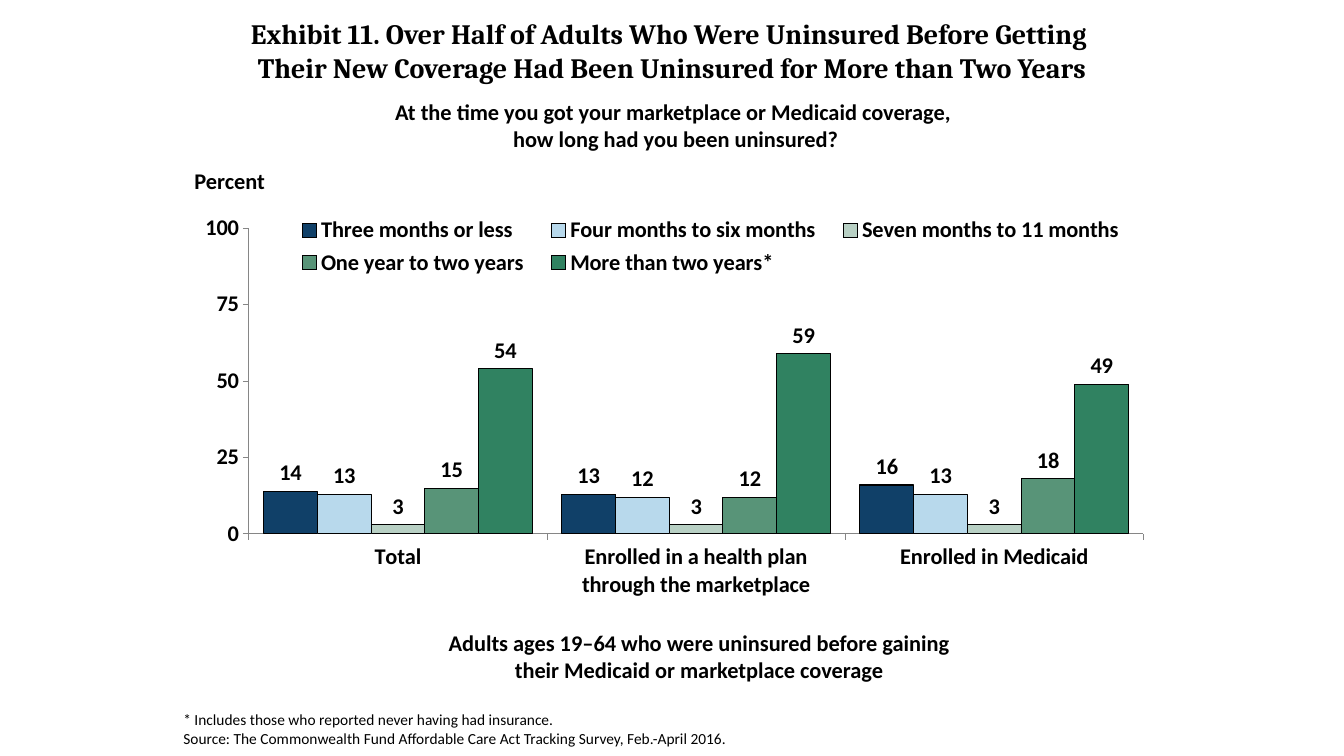
from lxml import etree
from pptx import Presentation
from pptx import util as u
from pptx.chart.data import CategoryChartData
from pptx.dml.color import RGBColor
from pptx.enum import chart as ch, text
from pptx.oxml.ns import qn

BLACK = RGBColor(0, 0, 0)
GREY = RGBColor(0x86, 0x86, 0x86)
NAVY = RGBColor(0x10, 0x40, 0x68)
SKY = RGBColor(0xB8, 0xD9, 0xEC)
MINT = RGBColor(0xB8, 0xD0, 0xC4)
SAGE = RGBColor(0x58, 0x94, 0x78)
GREEN = RGBColor(0x30, 0x82, 0x61)

GROUPS = ["Total", "Enrolled in a health plan\nthrough the marketplace", "Enrolled in Medicaid"]
SERIES = [
    ("Three months or less", (14, 13, 16), NAVY),
    ("Four months to six months", (13, 12, 13), SKY),
    ("Seven months to 11 months", (3, 3, 3), MINT),
    ("One year to two years", (15, 12, 18), SAGE),
    ("More than two years*", (54, 59, 49), GREEN),
]


def style(font, size, bold=True, face="Calibri"):
    font.name = face
    font.size = u.Pt(size)
    font.bold = bold
    font.color.rgb = BLACK


def write(para, lines, align, *look):
    para.alignment = align
    for i, line in enumerate(lines):
        if i:
            para.add_line_break()
        run = para.add_run()
        run.text = line
        style(run.font, *look)


def add_title(slide, lines):
    title = slide.shapes.title
    title.left, title.top = u.Cm(4.24), u.Cm(0.25)
    title.width, title.height = u.Cm(25.4), u.Cm(2.03)
    frame = title.text_frame
    frame.auto_size = text.MSO_AUTO_SIZE.NONE
    frame.vertical_anchor = text.MSO_ANCHOR.MIDDLE
    write(frame.paragraphs[0], lines, text.PP_ALIGN.CENTER, 20, True, "Cambria")


def add_text(slide, place, paras, align, size=16, bold=True, wrap=True):
    frame = slide.shapes.add_textbox(*map(u.Cm, place)).text_frame
    frame.word_wrap = wrap
    frame.auto_size = text.MSO_AUTO_SIZE.SHAPE_TO_FIT_TEXT
    for i, lines in enumerate(paras):
        para = frame.add_paragraph() if i else frame.paragraphs[0]
        write(para, lines, align, size, bold)


def set_layout(parent, index, box, inner=False):
    for old in parent.findall(qn("c:layout")):
        parent.remove(old)
    layout = etree.Element(qn("c:layout"))
    manual = etree.SubElement(layout, qn("c:manualLayout"))
    rules = [("layoutTarget", "inner")] if inner else []
    rules += [("xMode", "edge"), ("yMode", "edge")]
    rules += zip("xywh", map(str, box))
    for tag, val in rules:
        etree.SubElement(manual, qn("c:" + tag)).set("val", val)
    parent.insert(index, layout)


def set_axis(axis):
    axis.has_major_gridlines = False
    axis.major_tick_mark = ch.XL_TICK_MARK.OUTSIDE
    axis.minor_tick_mark = ch.XL_TICK_MARK.NONE
    axis.format.line.color.rgb = GREY
    axis.format.line.width = u.Pt(0.75)
    style(axis.tick_labels.font, 16)


def add_bars(slide, place):
    data = CategoryChartData(number_format="0")
    data.categories = GROUPS
    for name, vals, _ in SERIES:
        data.add_series(name, vals)
    kind = ch.XL_CHART_TYPE.COLUMN_CLUSTERED
    chart = slide.shapes.add_chart(kind, *map(u.Cm, place), data).chart
    style(chart.font, 14)
    chart.has_title = False

    set_axis(chart.category_axis)
    scale = chart.value_axis
    set_axis(scale)
    scale.minimum_scale, scale.maximum_scale = 0, 100
    scale.major_unit = 25
    scale.tick_labels.number_format = "0"
    scale.tick_labels.number_format_is_linked = False

    plot = chart.plots[0]
    plot.gap_width, plot.overlap = 55, 0
    plot.vary_by_categories = False
    for bars, (_, _, color) in zip(plot.series, SERIES):
        bars.format.fill.solid()
        bars.format.fill.fore_color.rgb = color
        bars.format.line.color.rgb = BLACK
        bars.format.line.width = u.Pt(0.75)
        labels = bars.data_labels
        labels.show_value = True
        labels.position = ch.XL_LABEL_POSITION.OUTSIDE_END
        labels.number_format = "0"
        labels.number_format_is_linked = False
        style(labels.font, 16)

    chart.has_legend = True
    legend = chart.legend
    legend.position = ch.XL_LEGEND_POSITION.TOP
    legend.include_in_layout = False
    style(legend.font, 16)
    root = chart.element
    set_layout(root.find(".//" + qn("c:legend")), 1, (0.1, 0.03, 0.88, 0.17))
    set_layout(root.find(".//" + qn("c:plotArea")), 0, (0.066, 0.07, 0.918, 0.749), True)


def main():
    deck = Presentation()
    deck.slide_width, deck.slide_height = u.Cm(33.87), u.Cm(19.05)
    slide = deck.slides.add_slide(deck.slide_layouts[5])
    mid, left = text.PP_ALIGN.CENTER, text.PP_ALIGN.LEFT
    add_title(slide, [
        "Exhibit 11. Over Half of Adults Who Were Uninsured Before Getting ",
        "Their New Coverage Had Been Uninsured for More than Two Years"])
    add_text(slide, (5.82, 15.72, 23.6, 1.63), [[
        "Adults ages 19–64 who were uninsured before gaining",
        "their Medicaid or marketplace coverage"]], mid)
    add_bars(slide, (4.65, 5.03, 24.56, 10.29))
    add_text(slide, (6.45, 2.34, 21.16, 1.63), [[
        "At the time you got your marketplace or Medicaid coverage, ",
        "how long had you been uninsured?"]], mid)
    add_text(slide, (4.37, 17.78, 25.27, 1.19), [
        ["* Includes those who reported never having had insurance."],
        ["Source: The Commonwealth Fund Affordable Care Act Tracking Survey, Feb.-April 2016."],
    ], left, 11, False)
    add_text(slide, (4.65, 4.09, 2.31, 0.94), [["Percent"]], left, wrap=False)
    deck.save("out.pptx")


if __name__ == "__main__":
    main()
